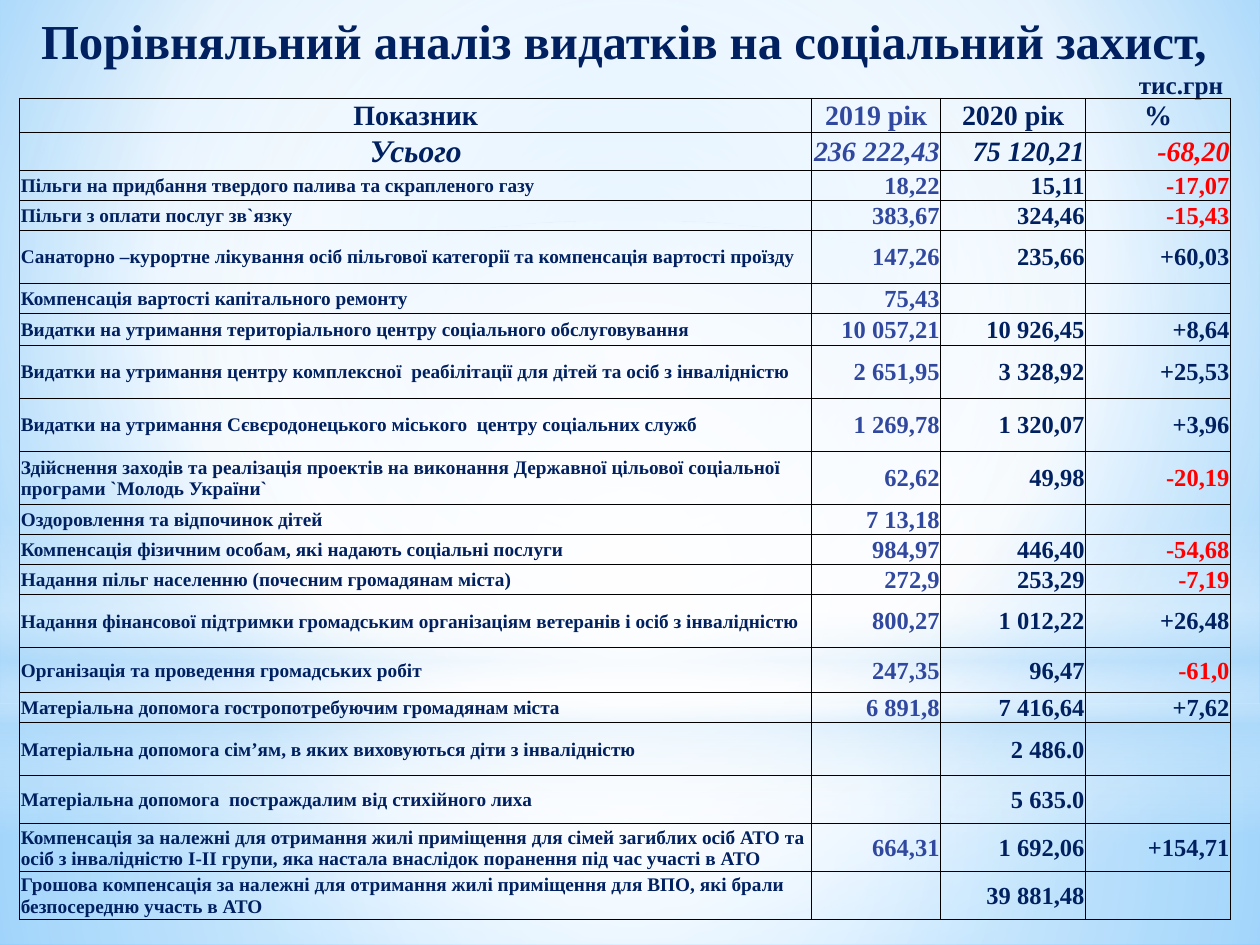
from lxml.etree import SubElement
from pptx import Presentation
from pptx.dml.color import RGBColor
from pptx.enum.shapes import MSO_SHAPE
from pptx.enum.text import MSO_ANCHOR, MSO_AUTO_SIZE, PP_ALIGN
from pptx.oxml.ns import qn
from pptx.util import Pt

NAVY, BLUE, RED = "002060", "31489F", "FF0000"
CENTER = (50, 50, 50, 50)
SINGLE, DOUBLE = 17.1, 30.4
COLUMN_WIDTHS = (452.6, 73.7, 82.8, 82.8)
HEADINGS = ("Показник", "2019 рік", "2020 рік", "%")
TOTAL = ("Усього", "236 222,43", "75 120,21", "-68,20")
EXPENSES = [
    (SINGLE, "Пільги на придбання твердого палива та скрапленого газу", "18,22", "15,11", "-17,07"),
    (SINGLE, "Пільги з оплати послуг зв`язку", "383,67", "324,46", "-15,43"),
    (DOUBLE, "Санаторно –курортне лікування осіб пільгової категорії та компенсація вартості проїзду",
     "147,26", "235,66", "+60,03"),
    (SINGLE, "Компенсація вартості капітального ремонту", "75,43", "", ""),
    (18.2, "Видатки на утримання територіального центру соціального обслуговування",
     "10 057,21", "10 926,45", "+8,64"),
    (DOUBLE, "Видатки на утримання центру комплексної  реабілітації для дітей та осіб з інвалідністю",
     "2 651,95", "3 328,92", "+25,53"),
    (DOUBLE, "Видатки на утримання Сєвєродонецького міського  центру соціальних служб",
     "1 269,78", "1 320,07", "+3,96"),
    (DOUBLE, "Здійснення заходів та реалізація проектів на виконання Державної цільової соціальної "
     "програми `Молодь України`", "62,62", "49,98", "-20,19"),
    (SINGLE, "Оздоровлення та відпочинок дітей", "7 13,18", "", ""),
    (SINGLE, "Компенсація фізичним особам, які надають соціальні послуги", "984,97", "446,40", "-54,68"),
    (SINGLE, "Надання пільг населенню (почесним громадянам міста)", "272,9", "253,29", "-7,19"),
    (DOUBLE, "Надання фінансової підтримки громадським організаціям ветеранів і осіб з інвалідністю",
     "800,27", "1 012,22", "+26,48"),
    (25.8, "Організація та проведення громадських робіт", "247,35", "96,47", "-61,0"),
    (SINGLE, "Матеріальна допомога гостропотребуючим громадянам міста", "6 891,8", "7 416,64", "+7,62"),
    (DOUBLE, "Матеріальна допомога сім’ям, в яких виховуються діти з інвалідністю", "", "2 486.0", ""),
    (27.4, "Матеріальна допомога  постраждалим від стихійного лиха", "", "5 635.0", ""),
    (27.4, "Компенсація за належні для отримання жилі приміщення для сімей загиблих осіб АТО та осіб "
     "з інвалідністю I-II групи, яка настала внаслідок поранення під час участі в АТО",
     "664,31", "1 692,06", "+154,71"),
    (27.1, "Грошова компенсація за належні для отримання жилі приміщення для ВПО, які брали "
     "безпосередню участь в АТО", "", "39 881,48", ""),
]


def rgb(color):
    return RGBColor.from_string(color)


def assign(target, values):
    for name, value in values.items():
        setattr(target, name, value)


class SlideBuilder:
    typeface = "Times New Roman"
    border_color = "000000"

    def __init__(self, slide):
        self.slide = slide

    def gradient(self, fill, owner, stops, focus=None):
        fill.gradient()
        grad = next(owner.iter(qn("a:gradFill")))
        for child in list(grad):
            grad.remove(child)
        stop_list = SubElement(grad, qn("a:gsLst"))
        for position, color, opacity in stops:
            stop = SubElement(stop_list, qn("a:gs"), pos=str(position * 1000))
            tint = SubElement(stop, qn("a:srgbClr"), val=color)
            if opacity < 100:
                SubElement(tint, qn("a:alpha"), val=str(opacity * 1000))
        if focus:
            circle = SubElement(grad, qn("a:path"), {"path": "circle"})
            edges = {side: str(share * 1000) for side, share in zip("ltrb", focus)}
            SubElement(circle, qn("a:fillToRect"), edges)
        else:
            SubElement(grad, qn("a:lin"), ang="5400000", scaled="0")

    def background(self, stops, focus):
        self.gradient(self.slide.background.fill, self.slide.element, stops, focus)

    def glow(self, preset, top, height, stops, focus=None):
        glow = self.slide.shapes.add_shape(preset, 0, Pt(top), Pt(720), Pt(height))
        glow.shadow.inherit = False
        glow.line.fill.background()
        self.gradient(glow.fill, glow.element, stops, focus)
        self.slide.shapes.title.element.addprevious(glow.element)

    def label(self, paragraph, text, size, color=NAVY, align=PP_ALIGN.LEFT, italic=False):
        paragraph.alignment = align
        run = paragraph.add_run()
        run.text = text
        assign(run.font, {"name": self.typeface, "size": Pt(size), "bold": True, "italic": italic})
        run.font.color.rgb = rgb(color)

    def title(self, heading, unit):
        title = self.slide.shapes.title
        assign(title, {"left": 0, "top": 0, "width": Pt(720), "height": Pt(50.4)})
        frame = title.text_frame
        assign(frame, {"margin_left": Pt(14.2), "margin_right": Pt(21), "margin_top": Pt(6),
                       "margin_bottom": 0, "vertical_anchor": MSO_ANCHOR.TOP,
                       "auto_size": MSO_AUTO_SIZE.NONE, "word_wrap": True})
        self.label(frame.paragraphs[0], heading, 27.9, align=PP_ALIGN.CENTER)
        self.label(frame.add_paragraph(), unit, 14.4, align=PP_ALIGN.RIGHT)

    def cell(self, cell, text, **style):
        assign(cell, {"margin_left": Pt(0.6), "margin_right": Pt(0.6), "margin_top": Pt(0.6),
                      "margin_bottom": 0, "vertical_anchor": MSO_ANCHOR.MIDDLE})
        cell.fill.background()
        paragraph = cell.text_frame.paragraphs[0]
        if text:
            self.label(paragraph, text, **style)
        else:
            paragraph._p.get_or_add_endParaRPr().set("sz", "1100")
        properties = cell._tc.get_or_add_tcPr()
        for index, side in enumerate(("lnL", "lnR", "lnT", "lnB")):
            border = SubElement(properties, qn(f"a:{side}"), w=str(Pt(0.5)))
            solid = SubElement(border, qn("a:solidFill"))
            SubElement(solid, qn("a:srgbClr"), val=self.border_color)
            properties.insert(index, border)

    def table(self, left, top, widths, rows):
        heights = [height for height, *_ in rows]
        table = self.slide.shapes.add_table(len(rows), len(widths), Pt(left), Pt(top),
                                            Pt(sum(widths)), Pt(sum(heights))).table
        assign(table, {"first_row": False, "horz_banding": False})
        for column, width in zip(table.columns, widths):
            column.width = Pt(width)
        for row_index, (height, *texts) in enumerate(rows):
            table.rows[row_index].height = Pt(height)
            for column_index, text in enumerate(texts):
                self.cell(table.cell(row_index, column_index), text,
                          **self.cell_style(row_index, column_index, text))

    def cell_style(self, row, column, text):
        is_name = column == 0
        if row == 0 or (row == 1 and is_name):
            align = PP_ALIGN.CENTER
        else:
            align = PP_ALIGN.LEFT if is_name else PP_ALIGN.RIGHT
        name_size, value_size = {0: (16, 16), 1: (18, 16)}.get(row, (11, 14))
        color = BLUE if column == 1 else RED if text.startswith("-") else NAVY
        return {"size": name_size if is_name else value_size, "color": color,
                "align": align, "italic": row == 1}


def main():
    presentation = Presentation()
    assign(presentation, {"slide_width": Pt(720), "slide_height": Pt(540)})
    builder = SlideBuilder(presentation.slides.add_slide(presentation.slide_layouts[5]))
    builder.background([(0, "9ED5FF", 100), (60, "FFFFFF", 100), (100, "5BB9FF", 100)],
                       (20, 10, 20, 60))
    builder.glow(MSO_SHAPE.RECTANGLE, 401.8, 138.2,
                 [(0, "FFFFFF", 91), (37, "FFFFFF", 76), (100, "B4DCFA", 79)], CENTER)
    builder.glow(MSO_SHAPE.RECTANGLE, 0, 401.8,
                 [(0, "FFFFFF", 89), (48, "FFFFFF", 62), (100, "B4DCFA", 79)], CENTER)
    builder.glow(MSO_SHAPE.RECTANGLE, 296.6, 180,
                 [(0, "FFFFFF", 0), (29, "FFFFFF", 30), (45, "B4DCFA", 40),
                  (55, "FFFFFF", 26), (65, "B4DCFA", 60), (100, "FFFFFF", 0)])
    builder.glow(MSO_SHAPE.OVAL, 126, 401.8, [(0, "FFFFFF", 100), (56, "FFFFFF", 0)], CENTER)
    builder.title("Порівняльний аналіз видатків на соціальний захист,", "тис.грн")
    builder.table(11.3, 56.2, COLUMN_WIDTHS, [(19.5, *HEADINGS), (21.7, *TOTAL), *EXPENSES])
    presentation.save("out.pptx")


if __name__ == "__main__":
    main()
